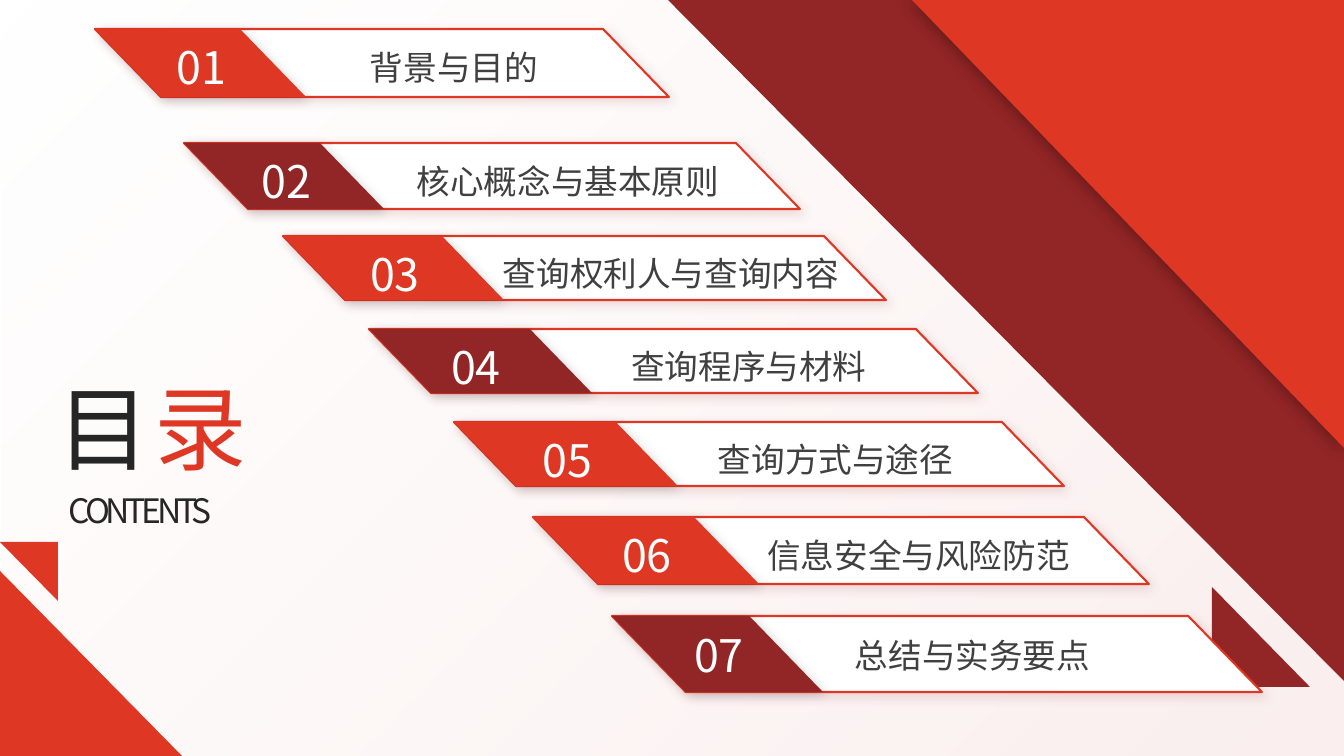
from lxml.etree import SubElement
from pptx import Presentation
from pptx.dml.color import RGBColor
from pptx.enum.shapes import MSO_SHAPE
from pptx.enum.text import MSO_AUTO_SIZE, PP_ALIGN
from pptx.oxml.ns import qn
from pptx.util import Emu, Pt

PX = 12192000 / 1344
THEME = {
    "font": "Noto Sans CJK SC",
    "red": "DE3724", "dark": "922525", "white": "FFFFFF", "black": "000000",
    "ink": "262626", "body": "404040", "tints": ("F8D7D3", "F2CBCB"),
    "title": 66, "label": 24, "number": 32,
}


def add_form(shapes, kind, box, fill, flip=None, adj=None, line=None, shadow=None):
    """Add a flat shape; shadow is (colour, opacity %, blur pt, angle)."""
    form = shapes.add_shape(kind, *(Emu(round(v * PX)) for v in box))
    if adj is not None:
        form.adjustments[0] = adj
    form.fill.solid()
    form.fill.fore_color.rgb = RGBColor.from_string(fill)
    if line:
        form.line.color.rgb = RGBColor.from_string(line)
        form.line.width = Pt(1.5)
    else:
        form.line.fill.background()
    form.shadow.inherit = False
    props = form._element.spPr
    if flip:
        props.find(qn("a:xfrm")).set(flip, "1")
    if shadow:
        tone, alpha, blur, angle = shadow
        cast = SubElement(props.find(qn("a:effectLst")), qn("a:outerShdw"),
                          blurRad=str(Pt(blur)), dist=str(Pt(3)),
                          dir=str(angle * 60000), algn="ctr", rotWithShape="0")
        color = SubElement(cast, qn("a:srgbClr"), val=tone)
        SubElement(color, qn("a:alpha"), val=str(alpha * 1000))
    return form


def add_text(shapes, box, *runs, size, align=PP_ALIGN.CENTER, spacing=0):
    """Add one line of text; each run is (wording, colour)."""
    area = shapes.add_textbox(*(Emu(round(v * PX)) for v in box))
    frame = area.text_frame
    frame.word_wrap = True
    frame.auto_size = MSO_AUTO_SIZE.SHAPE_TO_FIT_TEXT
    line = frame.paragraphs[0]
    line.alignment = align
    for words, color in runs:
        run = line.add_run()
        run.text = words
        run.font.size = Pt(size)
        run.font.name = THEME["font"]
        run.font.color.rgb = RGBColor.from_string(color)
        props = run._r.get_or_add_rPr()
        SubElement(props, qn("a:ea"), typeface=THEME["font"])
        if spacing:
            props.set("spc", str(spacing * 100))


deck = Presentation()
deck.slide_width = Emu(round(1344 * PX))
deck.slide_height = Emu(round(756 * PX))
slide = deck.slides.add_slide(deck.slide_layouts[6])
shapes = slide.shapes
red, dark = THEME["red"], THEME["dark"]

# Pale diagonal wash
wash = add_form(shapes, MSO_SHAPE.RECTANGLE, (2, 0, 1342, 756), THEME["white"])
wash.fill.gradient()
wash.fill.gradient_angle = 315
for stop, tint, alpha in zip(wash.fill.gradient_stops, THEME["tints"], (0, 32)):
    stop.color.rgb = RGBColor.from_string(tint)
    color = stop._gs.find(qn("a:srgbClr"))
    SubElement(color, qn("a:alpha"), val=str(alpha * 1000))

# Corner triangles
corners = [
    ((668, 0, 676, 681), dark, "flipV", None),
    ((912, 0, 432, 448), red, "flipV", (THEME["black"], 30, 10, 135)),
    ((0, 571, 184, 187), red, "flipH", None),
    ((1212, 587, 98, 100), dark, "flipH", None),
    ((0, 542, 58, 59), red, "flipV", None),
]
for box, fill, flip, shadow in corners:
    add_form(shapes, MSO_SHAPE.ISOSCELES_TRIANGLE, box, fill, flip, 1, shadow=shadow)

# Heading
add_text(shapes, (59, 485, 302, 50), ("CONTENTS", THEME["ink"]),
         size=THEME["label"], align=PP_ALIGN.JUSTIFY, spacing=-3)
add_text(shapes, (48, 366, 249, 122), ("目", THEME["ink"]), ("录", red),
         size=THEME["title"], align=PP_ALIGN.LEFT, spacing=3)

# Agenda bars: left, top, width, height, tab width, number left, label left, label width
agenda = [
    ("背景与目的", red, 95, 29, 574, 68, 211, 120, 283, 342),
    ("核心概念与基本原则", dark, 184, 143, 616, 66, 200, 209, 364, 408),
    ("查询权利人与查询内容", red, 283, 236, 603, 64, 221, 309, 481, 380),
    ("查询程序与材料", dark, 369, 329, 609, 64, 223, 384, 568, 362),
    ("查询方式与途径", red, 454, 422, 610, 64, 224, 481, 654, 363),
    ("信息安全与风险防范", red, 533, 517, 616, 67, 226, 559, 735, 367),
    ("总结与实务要点", dark, 612, 616, 650, 76, 211, 637, 801, 343),
]
for index, (label, fill, x, y, wide, high, tab, num, start, span) in enumerate(agenda, 1):
    bar = shapes.add_group_shape().shapes
    for width, paint, edge, tone in ((wide, THEME["white"], red, dark),
                                     (tab, fill, None, THEME["black"])):
        add_form(bar, MSO_SHAPE.PARALLELOGRAM, (x, y, width, high), paint,
                 "flipH", 0.97, edge, (tone, 15, 8, 45))
    add_text(bar, (start, y + round(high * 0.19), span, 50),
             (label, THEME["body"]), size=THEME["label"])
    add_text(bar, (num, y + round(high * 0.09), start - num, 62),
             (f"{index:02}", THEME["white"]), size=THEME["number"])

deck.save("out.pptx")
